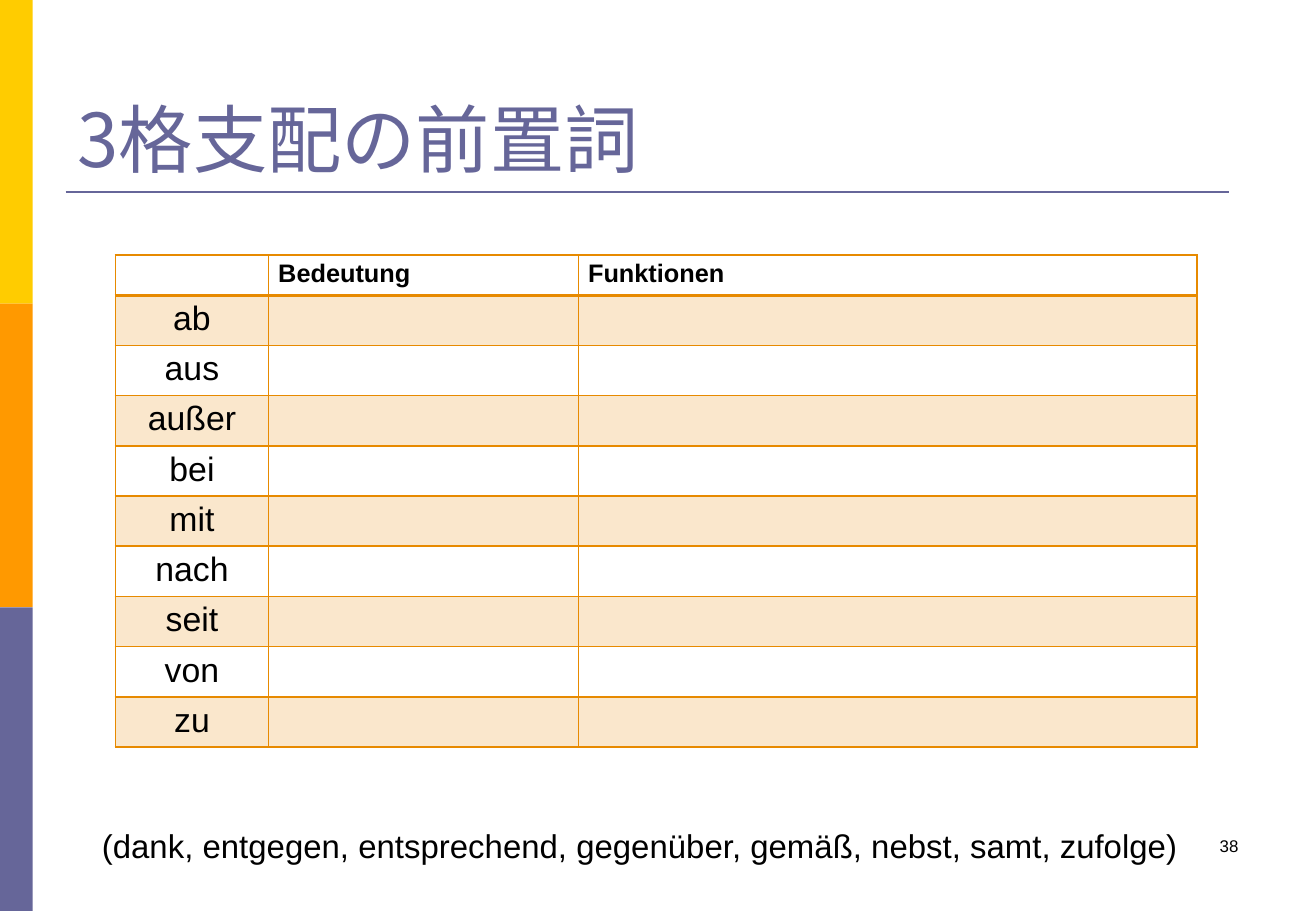
from lxml import etree
from pptx import Presentation, util as u
from pptx.dml.color import RGBColor
from pptx.enum import shapes, text
from pptx.oxml.ns import qn

VIOLET, ORANGE, BLACK = "666699", "E78A00", "000000"


def color(value):
    return RGBColor.from_string(value)


def write(frame, content, font_format, alignment=text.PP_ALIGN.LEFT):
    paragraph = frame.paragraphs[0]
    paragraph.alignment = alignment
    run = paragraph.add_run()
    run.text = content
    for name, value in font_format.items():
        setattr(run.font, name, value)
    return run


presentation = Presentation()
presentation.slide_width = u.Inches(10.83)
presentation.slide_height = u.Inches(7.5)
slide = presentation.slides.add_slide(presentation.slide_layouts[6])

for index, band_color in enumerate(["FFCC00", "FF9900", VIOLET]):
    band = slide.shapes.add_shape(
        shapes.MSO_SHAPE.RECTANGLE, 0, u.Inches(2.5 * index), u.Inches(0.27), u.Inches(2.5))
    band.shadow.inherit = False
    band.fill.solid()
    band.fill.fore_color.rgb = color(band_color)
    band.line.fill.background()

rule = slide.shapes.add_connector(
    shapes.MSO_CONNECTOR.STRAIGHT, u.Inches(0.54), u.Inches(1.58), u.Inches(10.11), u.Inches(1.58))
rule.line.color.rgb = color(VIOLET)
rule.line.width = u.Pt(1.5)
etree.SubElement(rule._element.spPr, qn("a:effectLst"))

text_boxes = [
    ("3格支配の前置詞", (0.54, 0.3, 9.75, 1.25), 44, "Noto Sans CJK JP", VIOLET,
     text.MSO_ANCHOR.BOTTOM, text.PP_ALIGN.LEFT),
    ("(dank, entgegen, entsprechend, gegenüber, gemäß, nebst, samt, zufolge)",
     (0.74, 6.71, 9.34, 0.5), 19.5, "Arial", BLACK,
     text.MSO_ANCHOR.MIDDLE, text.PP_ALIGN.LEFT),
    ("38", (7.76, 6.83, 2.53, 0.5), 10, "Arial", BLACK,
     text.MSO_ANCHOR.TOP, text.PP_ALIGN.RIGHT),
]
for content, box, size, font_name, font_color, anchor, alignment in text_boxes:
    frame = slide.shapes.add_textbox(*map(u.Inches, box)).text_frame
    frame.word_wrap = True
    frame.vertical_anchor = anchor
    run = write(frame, content, {"size": u.Pt(size), "name": font_name}, alignment)
    run.font.color.rgb = color(font_color)
    etree.SubElement(run._r.rPr, qn("a:ea"), typeface=font_name)

prepositions = ["ab", "aus", "außer", "bei", "mit", "nach", "seit", "von", "zu"]
rows = [["", "Bedeutung", "Funktionen"]] + [[word, "", ""] for word in prepositions]
header_height, body_height = 0.33, 3.65
table = slide.shapes.add_table(
    len(rows), 3, u.Inches(0.95), u.Inches(2.1),
    u.Inches(8.9), u.Inches(header_height + body_height)).table
table.first_row = False
table.horz_banding = False
for column, width in zip(table.columns, [1.26, 2.55, 5.09]):
    column.width = u.Inches(width)

cell_format = {
    "margin_left": u.Inches(0.08), "margin_right": u.Inches(0.08),
    "margin_top": u.Inches(0.04), "margin_bottom": u.Inches(0.04),
}
for row_index, row in enumerate(rows):
    header = row_index == 0
    table.rows[row_index].height = u.Inches(
        header_height if header else body_height / len(prepositions))
    size = u.Pt(15 if header else 20)
    alignment = text.PP_ALIGN.LEFT if header else text.PP_ALIGN.CENTER
    for column_index, content in enumerate(row):
        cell = table.cell(row_index, column_index)
        for name, value in cell_format.items():
            setattr(cell, name, value)
        if content:
            run = write(cell.text_frame, content,
                        {"size": size, "name": "Arial", "bold": header}, alignment)
            run.font.color.rgb = color(BLACK)
        else:
            paragraph = cell.text_frame.paragraphs[0]
            etree.SubElement(paragraph._p, qn("a:endParaRPr"), sz=str(int(size.pt * 100)))
        properties = cell._tc.get_or_add_tcPr()
        for side in "LRTB":
            thick = (row_index, side) in [(0, "B"), (1, "T")]
            border = etree.SubElement(
                properties, qn(f"a:ln{side}"), w=str(u.Pt(2 if thick else 1)))
            border_fill = etree.SubElement(border, qn("a:solidFill"))
            etree.SubElement(border_fill, qn("a:srgbClr"), val=ORANGE)
        if row_index % 2:
            cell.fill.solid()
            cell.fill.fore_color.rgb = color(ORANGE)
            tint = properties.find(qn("a:solidFill")).find(qn("a:srgbClr"))
            etree.SubElement(tint, qn("a:alpha"), val="20000")
        else:
            cell.fill.background()

presentation.save("out.pptx")
